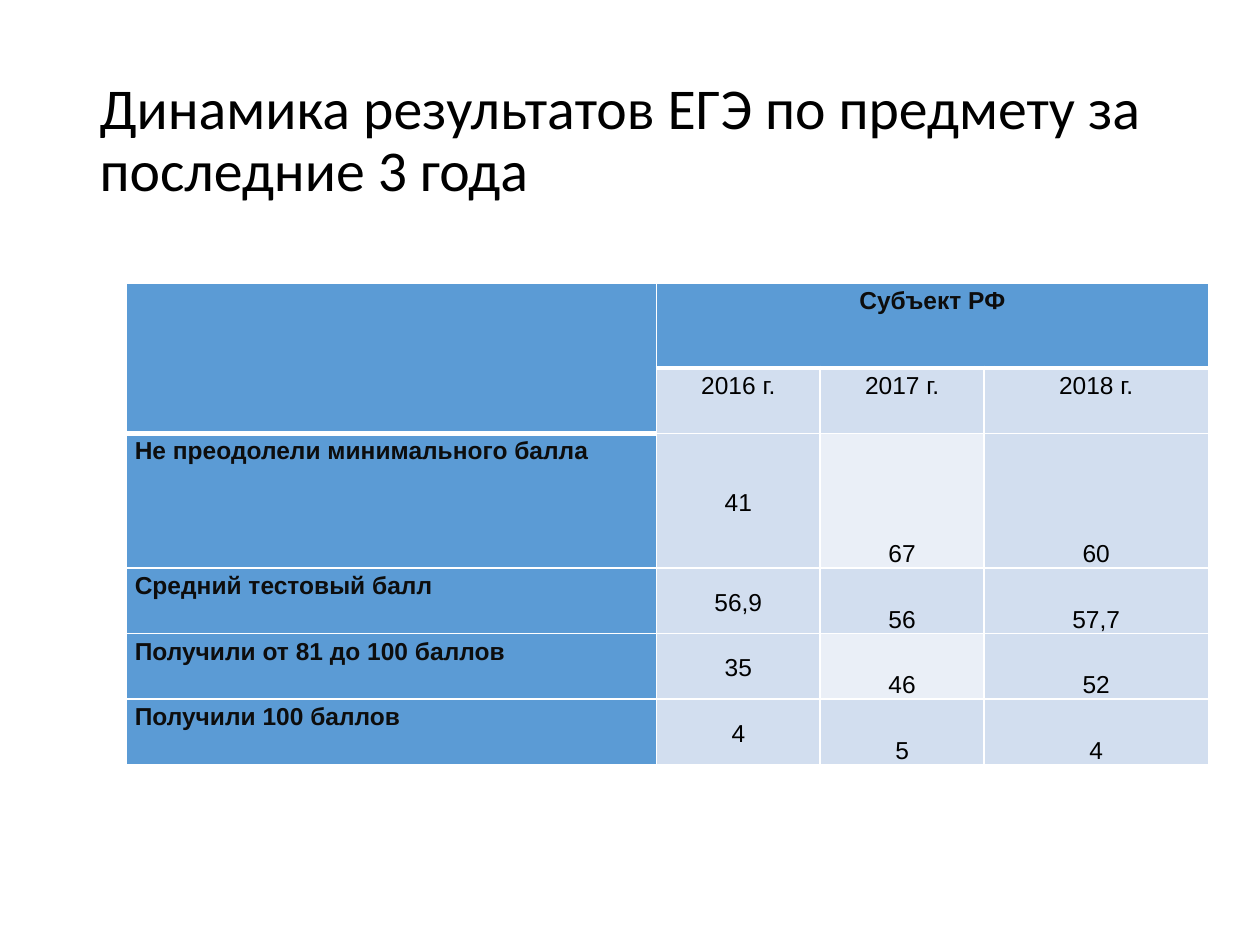
import pptx
import pptx.util
import pptx.dml.color
import pptx.enum.text
import pptx.oxml
import pptx.oxml.ns

Inches, Pt = pptx.util.Inches, pptx.util.Pt
RGB = pptx.dml.color.RGBColor
Align = pptx.enum.text.PP_ALIGN
Anchor = pptx.enum.text.MSO_ANCHOR

BLACK = RGB(0, 0, 0)
INK = RGB(0x0D, 0x0D, 0x0D)
BLUE = RGB(0x5B, 0x9B, 0xD5)
PALE = RGB(0xD2, 0xDE, 0xEF)
LIGHT = RGB(0xEA, 0xEF, 0xF7)

COLS = [4.21, 1.3, 1.3, 1.78]
ROWS = [0.67, 0.52, 1.07, 0.52, 0.52, 0.52]
DATA = [
    ["", "Субъект РФ", "", ""],
    ["", "2016 г.", "2017 г.", "2018 г."],
    ["Не преодолели минимального балла", "41", "67", "60"],
    ["Средний тестовый балл", "56,9", "56", "57,7"],
    ["Получили от 81 до 100 баллов", "35", "46", "52"],
    ["Получили 100 баллов", "4", "5", "4"],
]


def add_title(slide, box, text):
    title = slide.shapes.title
    title.left, title.top, title.width, title.height = map(Inches, box)
    frame = title.text_frame
    frame.text = text
    frame.auto_size = pptx.enum.text.MSO_AUTO_SIZE.NONE
    frame.vertical_anchor = Anchor.MIDDLE
    para = frame.paragraphs[0]
    para.alignment = Align.LEFT
    para.line_spacing = 0.9
    para.font.name, para.font.size = "Calibri", Pt(33)
    para.font.color.rgb = BLACK


def set_edges(cell, row, col):
    # A thick rule runs below the head, which is two rows deep at the left
    deep = 1 if col else 2
    widths = {"L": 1, "R": 1, "T": 3 if row == deep else 1,
              "B": 3 if row < deep else 1}
    props = cell._tc.get_or_add_tcPr()
    for side, width in widths.items():
        props.append(pptx.oxml.parse_xml(
            f'<a:ln{side} {pptx.oxml.ns.nsdecls("a")} w="{Pt(width)}">'
            '<a:solidFill><a:srgbClr val="FFFFFF"/></a:solidFill>'
            f'</a:ln{side}>'))


def style_cell(cell, row, col, text):
    head = row == 0 or col == 0
    set_edges(cell, row, col)
    cell.fill.solid()
    if head:
        cell.fill.fore_color.rgb = BLUE
    else:
        band = col == 2 and row in (2, 4)
        cell.fill.fore_color.rgb = LIGHT if band else PALE
    cell.margin_left = cell.margin_right = Inches(0.07)
    cell.margin_top = cell.margin_bottom = 0
    if row < 2 or col == 0:
        cell.vertical_anchor = Anchor.TOP
    else:
        cell.vertical_anchor = Anchor.MIDDLE if col == 1 else Anchor.BOTTOM
    if not text:
        return
    cell.text = text
    para = cell.text_frame.paragraphs[0]
    para.alignment = Align.CENTER if col else Align.JUSTIFY
    para.line_spacing = 1.15
    para.font.name, para.font.size = "Arial", Pt(14)
    para.font.bold = head
    para.font.color.rgb = INK if head else BLACK


def add_scores(slide, left, top):
    table = slide.shapes.add_table(
        len(ROWS), len(COLS), Inches(left), Inches(top),
        Inches(sum(COLS)), Inches(sum(ROWS))).table
    for col, width in zip(table.columns, COLS):
        col.width = Inches(width)
    for row, height in zip(table.rows, ROWS):
        row.height = Inches(height)
    for r, line in enumerate(DATA):
        for c, text in enumerate(line):
            style_cell(table.cell(r, c), r, c, text)
    table.cell(0, 0).merge(table.cell(1, 0))
    table.cell(0, 1).merge(table.cell(0, 3))


def main():
    deck = pptx.Presentation()
    deck.slide_width, deck.slide_height = Inches(10), Inches(7.5)
    slide = deck.slides.add_slide(deck.slide_layouts.get_by_name("Title Only"))
    add_title(slide, (0.69, 0.4, 8.62, 1.45),
              "Динамика результатов ЕГЭ по предмету за последние 3 года")
    add_scores(slide, 1, 2.25)
    deck.save("out.pptx")


if __name__ == "__main__":
    main()
